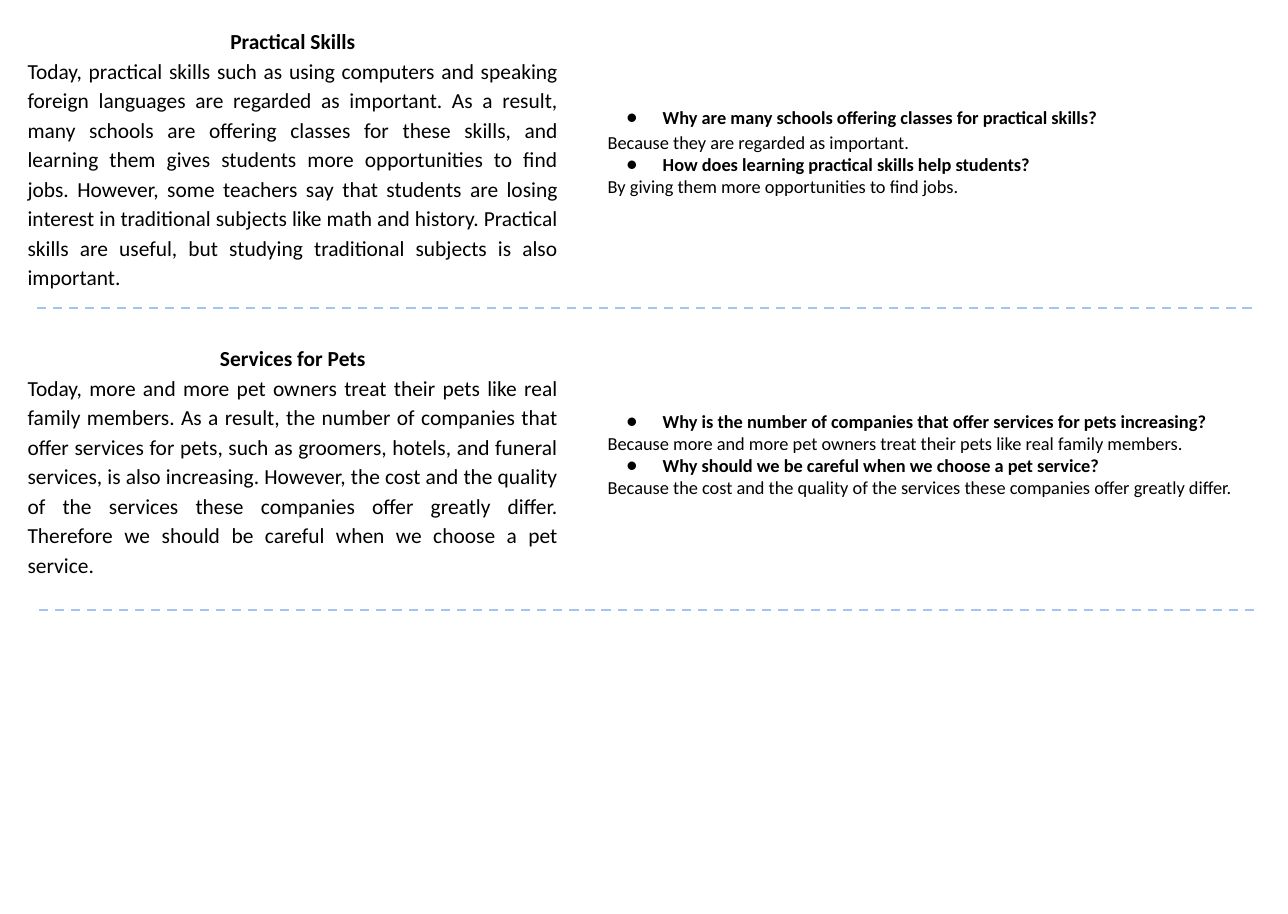
"""Build a reading handout: passages with comprehension questions, divided by dashed lines."""
from dataclasses import dataclass

from lxml.etree import SubElement
from pptx import Presentation
from pptx.dml.color import RGBColor
from pptx.enum.dml import MSO_LINE_DASH_STYLE as Dash
from pptx.enum.shapes import MSO_CONNECTOR_TYPE as Connector
from pptx.enum.text import MSO_ANCHOR as Anchor, MSO_AUTO_SIZE as AutoSize, PP_ALIGN as Align
from pptx.oxml.ns import qn
from pptx.shapes.placeholder import SlidePlaceholder
from pptx.slide import Slide
from pptx.util import Emu, Pt

PX = 9144
BLACK = RGBColor(0x00, 0x00, 0x00)
WHITE = RGBColor(0xFF, 0xFF, 0xFF)
DIVIDER_BLUE = RGBColor(0xA4, 0xC2, 0xF4)
COMPARISON_LAYOUT = 4
DIVIDER_WIDTH = 1108
BULLET_INDENT = 50
BULLET_HANG = -33


@dataclass(frozen=True)
class Box:
    left: int
    top: int
    width: int
    height: int


@dataclass(frozen=True)
class Question:
    ask: str
    answer: str
    answer_spacing: float = 1.0


@dataclass(frozen=True)
class Lesson:
    heading: str
    passage: str
    questions: tuple[Question, ...]
    passage_box: Box
    question_box: Box
    divider_left: int
    divider_top: int


LESSONS = (
    Lesson(
        "Practical Skills",
        "Today, practical skills such as using computers and speaking foreign languages are "
        "regarded as important. As a result, many schools are offering classes for these skills, "
        "and learning them gives students more opportunities to find jobs. However, some teachers "
        "say that students are losing interest in traditional subjects like math and history. "
        "Practical skills are useful, but studying traditional subjects is also important.",
        (
            Question("Why are many schools offering classes for practical skills?",
                     "Because they are regarded as important.", 1.15),
            Question("How does learning practical skills help students?",
                     "By giving them more opportunities to find jobs."),
        ),
        Box(15, 4, 502, 269), Box(542, 69, 582, 138), 29, 280,
    ),
    Lesson(
        "Services for Pets",
        "Today, more and more pet owners treat their pets like real family members. As a result, "
        "the number of companies that offer services for pets, such as groomers, hotels, and "
        "funeral services, is also increasing. However, the cost and the quality of the services "
        "these companies offer greatly differ. Therefore we should be careful when we choose a "
        "pet service.",
        (
            Question("Why is the number of companies that offer services for pets increasing?",
                     "Because more and more pet owners treat their pets like real family members."),
            Question("Why should we be careful when we choose a pet service?",
                     "Because the cost and the quality of the services these companies offer "
                     "greatly differ."),
        ),
        Box(15, 292, 502, 242), Box(542, 362, 595, 101), 31, 554,
    ),
)


def px(length: int) -> Emu:
    """Turn whole px into EMU."""
    return Emu(length * PX)


def place(holder: SlidePlaceholder, box: Box, anchor: Anchor) -> None:
    """Move a placeholder and set up its text frame."""
    for side in ("left", "top", "width", "height"):
        setattr(holder, side, px(getattr(box, side)))
    frame_format = {
        "auto_size": AutoSize.NONE, "word_wrap": True, "vertical_anchor": anchor,
        "margin_left": px(10), "margin_right": px(10),
        "margin_top": px(10), "margin_bottom": px(10),
    }
    for name, value in frame_format.items():
        setattr(holder.text_frame, name, value)


def write(holder: SlidePlaceholder, text: str, size: int, bold: bool, align: Align,
          spacing: float = 1.0, bullet: bool = False) -> None:
    """Add one formatted paragraph to a placeholder."""
    frame = holder.text_frame
    paragraph = frame.add_paragraph() if frame.text else frame.paragraphs[0]
    paragraph_format = {"alignment": align, "line_spacing": spacing,
                        "space_before": Pt(0), "space_after": Pt(0)}
    for name, value in paragraph_format.items():
        setattr(paragraph, name, value)
    run = paragraph.add_run()
    run.text = text
    font_format = {"name": "Calibri", "size": Pt(size), "bold": bold}
    for name, value in font_format.items():
        setattr(run.font, name, value)
    run.font.color.rgb = BLACK

    properties = paragraph._p.get_or_add_pPr()
    properties.set("marL", str(px(BULLET_INDENT if bullet else 0)))
    properties.set("indent", str(px(BULLET_HANG if bullet else 0)))
    if bullet:
        bullet_color = SubElement(properties, qn("a:buClr"))
        SubElement(bullet_color, qn("a:srgbClr"), val=str(BLACK))
        SubElement(properties, qn("a:buFont"), typeface="Calibri")
        SubElement(properties, qn("a:buChar"), char="●")
    else:
        SubElement(properties, qn("a:buNone"))


def draw_divider(slide: Slide, left: int, top: int) -> None:
    """Draw a dashed line below a lesson, from right to left."""
    divider = slide.shapes.add_connector(
        Connector.STRAIGHT, px(left + DIVIDER_WIDTH), px(top), px(left), px(top))
    divider.line.color.rgb = DIVIDER_BLUE
    divider.line.width = Pt(1.5)
    divider.line.dash_style = Dash.DASH
    SubElement(divider._element.spPr, qn("a:effectLst"))


def draw_lesson(slide: Slide, lesson: Lesson, passage: SlidePlaceholder,
                questions: SlidePlaceholder) -> None:
    """Fill the passage and question placeholders of one lesson."""
    place(questions, lesson.question_box, Anchor.MIDDLE)
    questions.fill.solid()
    questions.fill.fore_color.rgb = WHITE
    for question in lesson.questions:
        write(questions, question.ask, 12, True, Align.LEFT, bullet=True)
        write(questions, question.answer, 12, False, Align.LEFT, question.answer_spacing)

    place(passage, lesson.passage_box, Anchor.TOP)
    write(passage, lesson.heading, 14, True, Align.CENTER, 1.5)
    write(passage, lesson.passage, 14, False, Align.JUSTIFY, 1.15)
    draw_divider(slide, lesson.divider_left, lesson.divider_top)


def main() -> None:
    """Create the handout and save it."""
    deck = Presentation()
    deck.slide_width, deck.slide_height = px(1170), px(830)
    slide = deck.slides.add_slide(deck.slide_layouts[COMPARISON_LAYOUT])
    unused_title = slide.shapes.title.element
    unused_title.getparent().remove(unused_title)
    for number, lesson in enumerate(LESSONS):
        passage_index = 1 + 2 * number
        draw_lesson(slide, lesson, slide.placeholders[passage_index],
                    slide.placeholders[passage_index + 1])
    deck.save("out.pptx")


if __name__ == "__main__":
    main()
